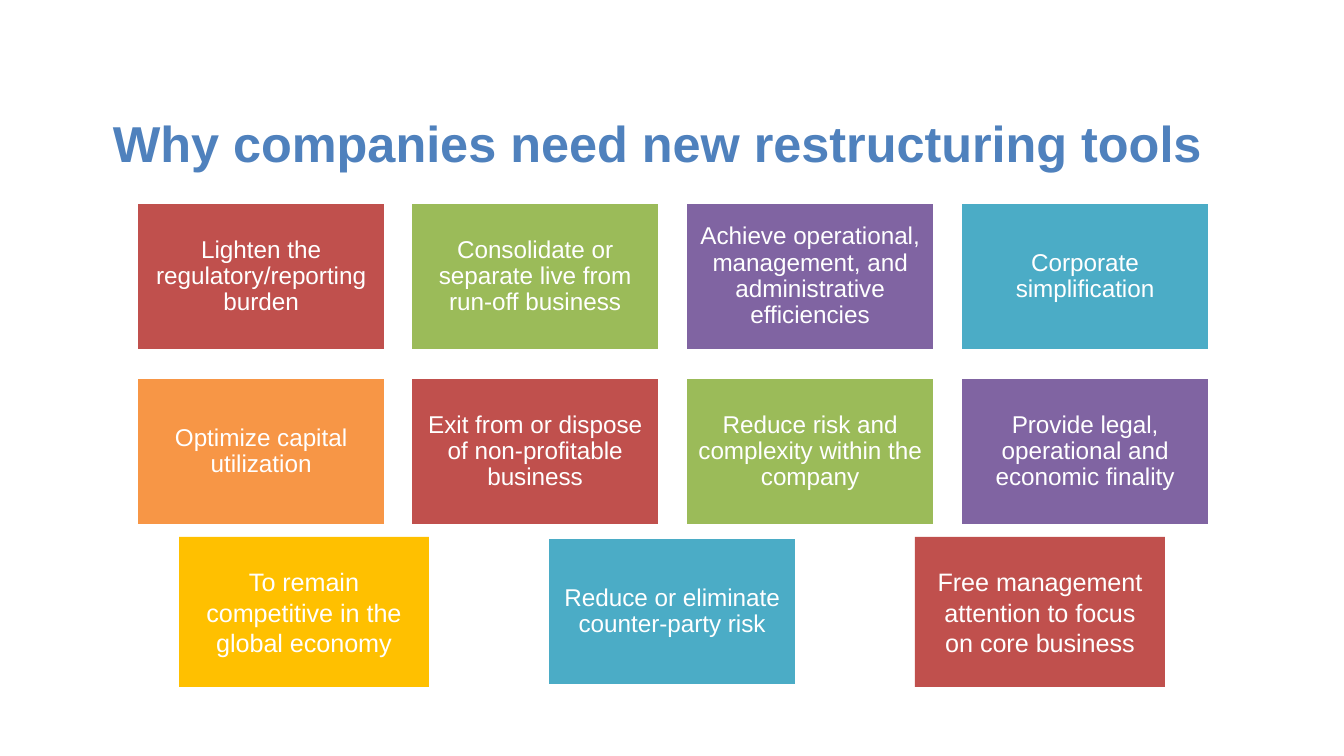
from pptx import Presentation
from pptx.dml.color import RGBColor
from pptx.enum.shapes import MSO_SHAPE
from pptx.enum.text import MSO_ANCHOR, MSO_AUTO_SIZE, PP_ALIGN
from pptx.util import Pt

RECTANGLE = MSO_SHAPE.RECTANGLE
MIDDLE = MSO_ANCHOR.MIDDLE
CENTER = PP_ALIGN.CENTER
NO_AUTOFIT = MSO_AUTO_SIZE.NONE

EMU_PER_PX = 914400 / 134.4
FONT = "Arial"
WHITE, BLUE = "FFFFFF", "4F81BD"
RED, GREEN, PURPLE = "C0504D", "9BBB59", "8064A2"
TEAL, ORANGE, GOLD = "4BACC6", "F79646", "FFC000"

HEADLINE = "Why companies need new restructuring tools"
GRID_REASONS = [
    ("Lighten the regulatory/reporting burden", RED),
    ("Consolidate or separate live from run-off business", GREEN),
    ("Achieve operational, management, and administrative efficiencies", PURPLE),
    ("Corporate simplification", TEAL),
    ("Optimize capital utilization", ORANGE),
    ("Exit from or dispose of non-profitable business", RED),
    ("Reduce risk and complexity within the company", GREEN),
    ("Provide legal, operational and economic finality", PURPLE),
]
CENTER_REASON = ("Reduce or eliminate counter-party risk", TEAL)
SIDE_REASONS = [
    ("To remain competitive in the global economy", GOLD),
    ("Free management attention to focus on core business", RED),
]

COLUMNS = 4
GRID_LEFT, GRID_TOP = 136, 202
GRID_SPAN, ROW_PITCH = 824, 175
CARD_WIDTH, CARD_HEIGHT = 250, 149
BOTTOM_LEFT, BOTTOM_TOP, BOTTOM_PITCH = 179, 537, 368


def px(length):
    """Turn a length in px into EMU."""
    return round(length * EMU_PER_PX)


def color(hex_code):
    """Turn a hex string into a colour."""
    return RGBColor.from_string(hex_code)


def write(frame, wording, size, hex_code, bold=False, spacing=None):
    """Write one centred paragraph into the middle of a text frame."""
    frame.word_wrap = True
    frame.auto_size = NO_AUTOFIT
    frame.vertical_anchor = MIDDLE
    paragraph = frame.paragraphs[0]
    paragraph.alignment = CENTER
    paragraph.line_spacing = spacing
    run = paragraph.add_run()
    run.text = wording
    run.font.name = FONT
    run.font.size = Pt(size)
    run.font.bold = bold
    run.font.color.rgb = color(hex_code)


def set_margins(frame, side, vertical):
    """Set the inner margins of a text frame in px."""
    frame.margin_left = frame.margin_right = px(side)
    frame.margin_top = frame.margin_bottom = px(vertical)


def add_headline(slide):
    """Place and fill the title placeholder."""
    headline = slide.shapes.title
    headline.left, headline.top = px(78), px(73)
    headline.width, headline.height = px(1159), px(146)
    set_margins(headline.text_frame, 9, 5)
    write(headline.text_frame, HEADLINE, 27, BLUE, bold=True, spacing=0.9)
    headline.text_frame.paragraphs[0].space_after = Pt(4.5)


def add_block(slide, left, top, height, fill):
    """Add a plain filled rectangle of card width."""
    block = slide.shapes.add_shape(
        RECTANGLE, px(left), px(top), px(CARD_WIDTH), px(height))
    block.shadow.inherit = False
    block.fill.solid()
    block.fill.fore_color.rgb = color(fill)
    block.line.fill.background()
    return block


def add_card(slide, left, top, reason):
    """Add a white-edged card with tight text."""
    wording, fill = reason
    card = add_block(slide, left, top, CARD_HEIGHT, fill)
    card.line.color.rgb = color(WHITE)
    card.line.width = Pt(2)
    set_margins(card.text_frame, 7, 7)
    write(card.text_frame, wording, 13, WHITE, spacing=0.9)


def add_side_card(slide, left, reason):
    """Add a borderless card in the bottom row."""
    wording, fill = reason
    card = add_block(slide, left, BOTTOM_TOP, CARD_HEIGHT + 1, fill)
    write(card.text_frame, wording, 13.5, WHITE)


def main():
    """Build the slide and save it."""
    deck = Presentation()
    deck.slide_width, deck.slide_height = px(1344), px(756)
    slide = deck.slides.add_slide(deck.slide_layouts[5])
    add_headline(slide)
    for index, reason in enumerate(GRID_REASONS):
        row, column = divmod(index, COLUMNS)
        left = GRID_LEFT + column * GRID_SPAN // (COLUMNS - 1)
        add_card(slide, left, GRID_TOP + row * ROW_PITCH, reason)
    add_card(slide, BOTTOM_LEFT + BOTTOM_PITCH, BOTTOM_TOP, CENTER_REASON)
    for side, reason in enumerate(SIDE_REASONS):
        add_side_card(slide, BOTTOM_LEFT + 2 * side * BOTTOM_PITCH, reason)
    deck.save("out.pptx")


if __name__ == "__main__":
    main()
